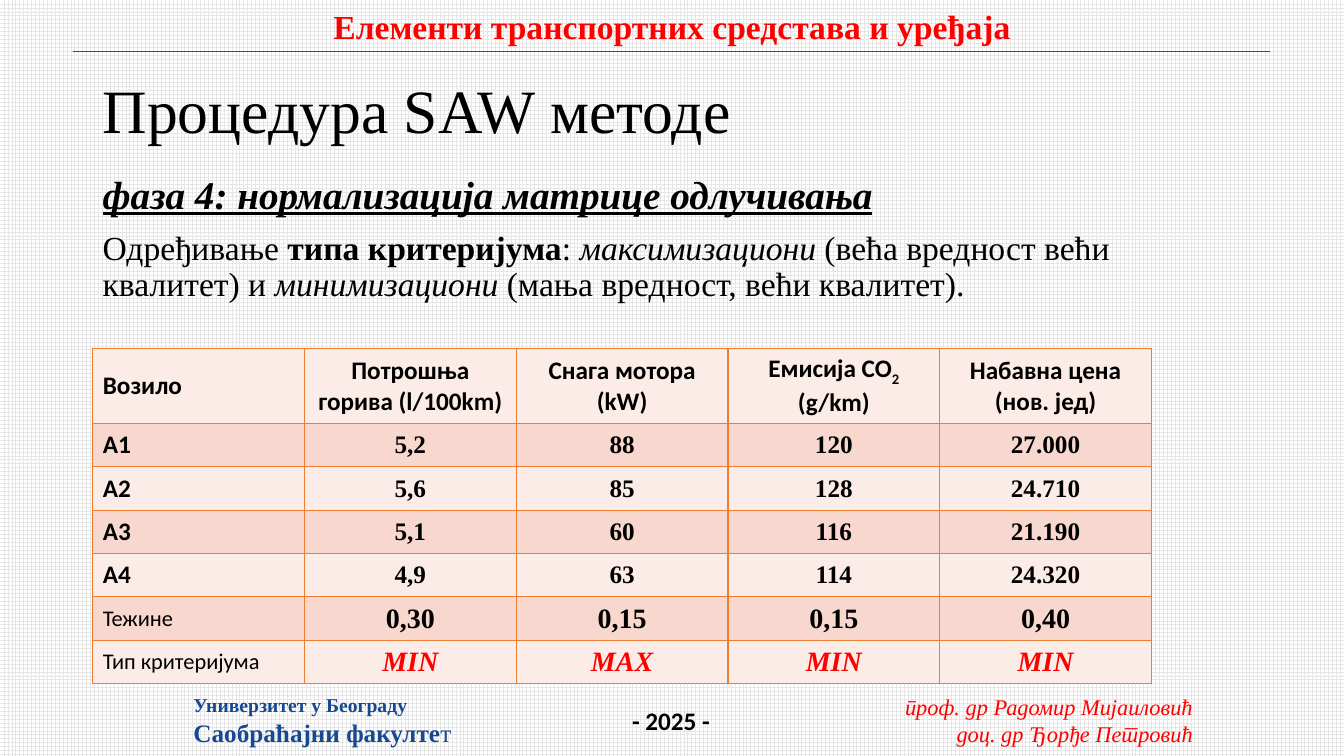
import pptx
import pptx.util
import pptx.dml.color
import pptx.enum.dml
import pptx.enum.shapes
import pptx.enum.text
from lxml import etree
from pptx.util import Inches, Pt

# Content: a run is (text, style changes)
SERIF, SANS = "Times New Roman", "Calibri"
RED, BLUE, BLACK, ORANGE = "FF0000", "16498E", "000000", "ED7D31"
BANDS = ["FCECE8", "F8D7CE"]

COURSE = [[("Елементи транспортних средстава и уређаја", {})]]
AUTHORS = [[("проф. др Радомир Мијаиловић", {})], [("доц. др Ђорђе Петровић", {})]]
YEAR = [[("- 2025 -", {})]]
FACULTY = [
    [("Универзитет у Београду", {"size": 14})],
    [("Саобраћајни факулте", {}), ("т", {"bold": False})],
]
TITLE = [[("Процедура SAW методе", {})]]
BODY = [
    [("фаза 4: нормализација матрице одлучивања",
      {"size": 28, "bold": True, "italic": True, "underline": True})],
    [("Одређивање ", {}), ("типа критеријума", {"bold": True}), (": ", {}),
     ("максимизациони", {"italic": True}), (" (већа вредност већи квалитет) и ", {}),
     ("минимизациони ", {"italic": True}), ("(мања вредност, већи квалитет).", {})],
]
HEADINGS = [
    [("Возило", {})],
    [("Потрошња горива (l/100km)", {})],
    [("Снага мотора (kW)", {})],
    [("Емисија CO", {}), ("2 ", {"baseline": -25}), ("(g/km)", {})],
    [("Набавна цена (нов. јед)", {})],
]
VEHICLES = [
    ["А1", "5,2", "88", "120", "27.000"],
    ["А2", "5,6", "85", "128", "24.710"],
    ["А3", "5,1", "60", "116", "21.190"],
    ["А4", "4,9", "63", "114", "24.320"],
]
WEIGHTS = ["Тежине", "0,30", "0,15", "0,15", "0,40"]
CRITERIA = ["Тип критеријума", "MIN", "MAX", "MIN", "MIN"]

# Styles
HEAD_STYLE = {"name": SANS, "size": 18, "bold": True}
VALUE_STYLE = {"name": SERIF, "size": 18, "bold": True}
LABEL_STYLE = {"name": SANS, "size": 16}
WEIGHT_STYLE = {"name": SERIF, "size": 20, "bold": True}
CRITERION_STYLE = {**WEIGHT_STYLE, "italic": True, "color": RED}

ALIGN = pptx.enum.text.PP_ALIGN
ANCHOR = pptx.enum.text.MSO_ANCHOR


def rgb(value):
    return pptx.dml.color.RGBColor.from_string(value)


def write(frame, paragraphs, base, align=ALIGN.LEFT, spacing=None, before=0):
    for index, runs in enumerate(paragraphs):
        paragraph = frame.paragraphs[0] if index == 0 else frame.add_paragraph()
        paragraph.alignment = align
        if spacing:
            paragraph.line_spacing = spacing
        if index and before:
            paragraph.space_before = Pt(before)
        for text, changes in runs:
            style = {**base, **changes}
            run = paragraph.add_run()
            run.text = text
            run.font.name = style["name"]
            run.font.size = Pt(style["size"])
            run.font.bold = style.get("bold", False)
            run.font.italic = style.get("italic", False)
            run.font.underline = style.get("underline", False)
            run.font.color.rgb = rgb(style.get("color", BLACK))
            properties = run.font._element
            if "baseline" in style:
                properties.set("baseline", str(style["baseline"] * 1000))
            if "language" in style:
                properties.set("lang", style["language"])


def add_text(slide, box, paragraphs, base, wrap=False, anchor=ANCHOR.TOP, **layout):
    frame = slide.shapes.add_textbox(*map(Inches, box)).text_frame
    frame.word_wrap = wrap
    frame.vertical_anchor = anchor
    write(frame, paragraphs, base, **layout)


def set_borders(cell, color, width):
    properties = cell._tc.get_or_add_tcPr()
    for side in ("lnL", "lnR", "lnT", "lnB"):
        line = etree.SubElement(properties, pptx.oxml.ns.qn("a:" + side), w=str(Pt(width)))
        fill = etree.SubElement(line, pptx.oxml.ns.qn("a:solidFill"))
        etree.SubElement(fill, pptx.oxml.ns.qn("a:srgbClr"), val=color)


def add_table(slide):
    # Every row: its cells as runs, label style, value style
    rows = [(HEADINGS, HEAD_STYLE, HEAD_STYLE)]
    plain = [(row, HEAD_STYLE, VALUE_STYLE) for row in VEHICLES]
    plain += [(WEIGHTS, LABEL_STYLE, WEIGHT_STYLE), (CRITERIA, LABEL_STYLE, CRITERION_STYLE)]
    rows += [([[(text, {})] for text in row], label, value) for row, label, value in plain]

    table = slide.shapes.add_table(
        len(rows), len(HEADINGS), Inches(0.92), Inches(3.46), Inches(10.5), Inches(3.27)).table
    table.first_row = table.horz_banding = False
    for column in table.columns:
        column.width = Inches(2.1)
    for row_index, (cells, label_style, value_style) in enumerate(rows):
        table.rows[row_index].height = Inches(0.43 if row_index else 0.74)
        for column_index, runs in enumerate(cells):
            cell = table.cell(row_index, column_index)
            set_borders(cell, ORANGE, 1)
            cell.fill.solid()
            cell.fill.fore_color.rgb = rgb(BANDS[row_index % 2])
            cell.vertical_anchor = ANCHOR.MIDDLE
            if row_index and column_index:
                cell.margin_left = cell.margin_right = Inches(0.07)
                cell.margin_top = cell.margin_bottom = 0
            write(cell.text_frame, [runs], value_style if column_index else label_style,
                  align=ALIGN.CENTER if column_index else ALIGN.LEFT)


def main():
    presentation = pptx.Presentation()
    presentation.slide_width, presentation.slide_height = Inches(13.33), Inches(7.5)
    slide = presentation.slides.add_slide(presentation.slide_layouts[6])

    # Grid background
    background = slide.background.fill
    background.patterned()
    background.pattern = pptx.enum.dml.MSO_PATTERN.LARGE_GRID
    background.fore_color.rgb = rgb("E7E6E6")
    background.back_color.rgb = rgb("FFFFFF")

    # Header and footer
    add_text(slide, (8.83, 6.83, 3.1, 0.64), AUTHORS,
             {"name": SERIF, "size": 16, "italic": True, "color": RED, "language": "sr-Cyrl-RS"},
             align=ALIGN.RIGHT)
    rule = slide.shapes.add_connector(
        pptx.enum.shapes.MSO_CONNECTOR.STRAIGHT,
        Inches(0.72), Inches(0.51), Inches(12.6), Inches(0.51))
    rule.line.color.rgb = rgb(RED)
    rule.line.width = Pt(0.5)
    etree.SubElement(rule._element.spPr, pptx.oxml.ns.qn("a:effectLst"))
    add_text(slide, (3.17, 0.01, 6.99, 0.5), COURSE,
             {"name": SERIF, "size": 24, "bold": True, "color": RED}, align=ALIGN.CENTER)
    add_text(slide, (6.17, 6.95, 0.98, 0.4), YEAR, HEAD_STYLE)
    add_text(slide, (1.82, 6.83, 2.79, 0.64), FACULTY, {**VALUE_STYLE, "color": BLUE})

    # Title, body and decision matrix
    add_text(slide, (0.92, 0.4, 11.5, 1.45), TITLE, {"name": SERIF, "size": 44},
             wrap=True, anchor=ANCHOR.MIDDLE, spacing=0.9)
    add_text(slide, (0.92, 1.69, 11.5, 5.06), BODY, {"name": SERIF, "size": 24},
             wrap=True, spacing=0.9, before=10)
    add_table(slide)

    presentation.save("out.pptx")


if __name__ == "__main__":
    main()
